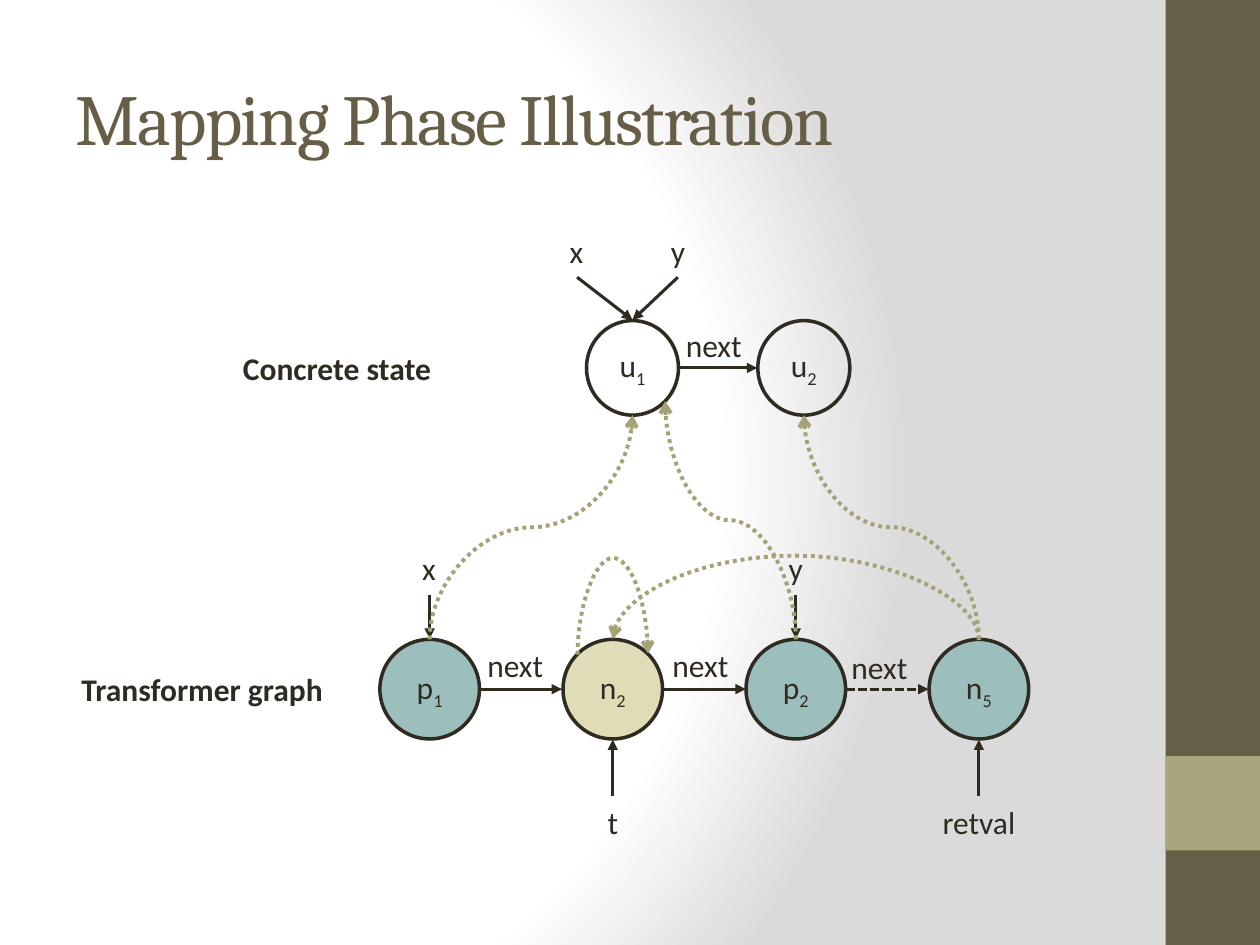
from dataclasses import dataclass
from math import cos, radians, sin
from typing import Optional

from lxml.etree import SubElement
from pptx import Presentation
from pptx.dml.color import RGBColor
from pptx.enum.dml import MSO_LINE_DASH_STYLE as Dash
from pptx.enum.shapes import MSO_CONNECTOR_TYPE as Connector, MSO_AUTO_SHAPE_TYPE as Preset
from pptx.enum.text import MSO_ANCHOR as Anchor, MSO_AUTO_SIZE as AutoSize, PP_ALIGN as Align
from pptx.oxml import parse_xml
from pptx.oxml.ns import nsdecls, qn
from pptx.util import Inches, Pt

COLORS = {
    "ink": "2F2B20", "brown": "675E47", "olive": "A9A57C", "mapping": "A6A278",
    "teal": "9CBEBD", "sand": "DFDCB7", "white": "FFFFFF", "gray": "DADADA",
}
TOP, TOP_LEFT, BOTTOM, BOTTOM_RIGHT, TOP_RIGHT = 0, 1, 4, 5, 7
GRAPH_Y, STATE_Y = 5.47, 2.92
P1_X, N2_X, P2_X, N5_X = (3.41 + 1.453 * column for column in range(4))


@dataclass
class Node:
    letter: str
    index: str
    x: float
    y: float
    width: float
    height: float
    fill: Optional[str] = None

    def site(self, number: int) -> tuple[float, float]:
        angle = radians(90 + 45 * number)
        return self.x + self.width / 2 * cos(angle), self.y - self.height / 2 * sin(angle)


@dataclass
class Arrow:
    start: tuple[float, float]
    end: tuple[float, float]
    dash: Optional[Dash] = None


@dataclass
class Label:
    text: str
    left: float
    top: float
    width: float
    height: float = 0.4
    bold: bool = False
    align: Align = Align.CENTER


@dataclass
class Mapping:
    source: str
    source_site: int
    target: str
    target_site: int
    rise: Optional[float] = None


NODES = {
    "n2": Node("n", "2", N2_X, GRAPH_Y, 0.79, 0.79, "sand"),
    "p1": Node("p", "1", P1_X, GRAPH_Y, 0.79, 0.79, "teal"),
    "p2": Node("p", "2", P2_X, GRAPH_Y, 0.79, 0.79, "teal"),
    "n5": Node("n", "5", N5_X, GRAPH_Y, 0.79, 0.79, "teal"),
    "u1": Node("u", "1", 5.02, STATE_Y, 0.73, 0.75),
    "u2": Node("u", "2", 6.38, STATE_Y, 0.73, 0.75),
}
ARROWS = [
    Arrow((P1_X, 4.72), (P1_X, 5.07)),
    Arrow((P2_X, 4.72), (P2_X, 5.07)),
    Arrow((3.8, GRAPH_Y), (4.46, GRAPH_Y)),
    Arrow((5.25, GRAPH_Y), (5.92, GRAPH_Y)),
    Arrow((6.71, GRAPH_Y), (7.37, GRAPH_Y), Dash.SQUARE_DOT),
    Arrow((N2_X, 6.32), (N2_X, 5.87)),
    Arrow((N5_X, 6.32), (N5_X, 5.87)),
    Arrow((4.58, 2.2), (5.02, 2.54)),
    Arrow((5.38, 2.2), (5.02, 2.54)),
    Arrow((5.39, STATE_Y), (6.01, STATE_Y)),
]
LABELS = [
    Label("x", 3.25, 4.31, 0.31),
    Label("y", 6.16, 4.31, 0.31),
    Label("t", 4.72, 6.32, 0.29),
    Label("retval", 7.38, 6.32, 0.78),
    Label("next", 3.74, 5.08, 0.7),
    Label("next", 5.21, 5.08, 0.7),
    Label("next", 6.63, 5.09, 0.7),
    Label("x", 4.42, 1.79, 0.31),
    Label("y", 5.22, 1.79, 0.32),
    Label("next", 5.34, 2.54, 0.65),
    Label("Concrete state", 1.83, 2.72, 1.99, bold=True, align=Align.LEFT),
    Label("Transformer graph", 0.54, 5.27, 2.13, bold=True),
]
MAPPINGS = [
    Mapping("p1", TOP, "u1", BOTTOM),
    Mapping("p2", TOP, "u1", BOTTOM_RIGHT),
    Mapping("n5", TOP, "u2", BOTTOM),
    Mapping("n5", TOP, "n2", TOP, 0.68),
    Mapping("n2", TOP_LEFT, "n2", TOP_RIGHT, 0.78),
]


def color(name: str) -> RGBColor:
    return RGBColor.from_string(COLORS[name])


def apply(target, **formats) -> None:
    for name, value in formats.items():
        setattr(target, name, value)


def add_run(paragraph, text: str, bold: bool = False):
    run = paragraph.add_run()
    run.text = text
    apply(run.font, name="Calibri", size=Pt(18), bold=bold)
    run.font.color.rgb = color("ink")
    return run


def paint_background(slide) -> None:
    stops = "".join(
        f'<a:gs pos="{position * 1000}"><a:srgbClr val="{COLORS[name]}"/></a:gs>'
        for position, name in ((0, "white"), (75, "white"), (100, "gray"))
    )
    slide.element.cSld.insert(0, parse_xml(
        f'<p:bg {nsdecls("p", "a")}><p:bgPr><a:gradFill rotWithShape="1"><a:gsLst>{stops}</a:gsLst>'
        '<a:path path="circle"><a:fillToRect l="20000" t="50000" r="100000" b="50000"/></a:path>'
        '</a:gradFill><a:effectLst/></p:bgPr></p:bg>'))


def add_band(slide, top: float, height: float, fill: str) -> None:
    band = slide.shapes.add_shape(Preset.RECTANGLE, Inches(9.25), Inches(top), Inches(0.75), Inches(height))
    band.shadow.inherit = False
    band.fill.solid()
    band.fill.fore_color.rgb = color(fill)
    band.line.fill.background()


def set_title(slide, text: str) -> None:
    title = slide.shapes.title
    apply(title, left=Inches(0.5), top=Inches(0.3), width=Inches(8.33), height=Inches(1.25))
    apply(title.text_frame, text=text, vertical_anchor=Anchor.MIDDLE, auto_size=AutoSize.NONE)
    paragraph = title.text_frame.paragraphs[0]
    paragraph.alignment = Align.LEFT
    run = paragraph.runs[0]
    apply(run.font, name="Cambria", size=Pt(41))
    run.font.color.rgb = color("brown")
    run.font._element.set("spc", "-100")


def add_node(slide, node: Node):
    shape = slide.shapes.add_shape(
        Preset.OVAL, Inches(node.x - node.width / 2), Inches(node.y - node.height / 2),
        Inches(node.width), Inches(node.height))
    shape.shadow.inherit = False
    if node.fill:
        shape.fill.solid()
        shape.fill.fore_color.rgb = color(node.fill)
    else:
        shape.fill.background()
    shape.line.color.rgb = color("ink")
    shape.line.width = Pt(2)
    apply(shape.text_frame, word_wrap=False, vertical_anchor=Anchor.MIDDLE)
    paragraph = shape.text_frame.paragraphs[0]
    paragraph.alignment = Align.CENTER
    add_run(paragraph, node.letter)
    add_run(paragraph, node.index).font._element.set("baseline", "-25000")
    return shape


def add_label(slide, label: Label) -> None:
    box = slide.shapes.add_textbox(*map(Inches, (label.left, label.top, label.width, label.height)))
    apply(box.text_frame, word_wrap=label.align == Align.LEFT, vertical_anchor=Anchor.MIDDLE)
    paragraph = box.text_frame.paragraphs[0]
    paragraph.alignment = label.align
    add_run(paragraph, label.text, label.bold)


def add_line(slide, kind: Connector, arrow: Arrow, stroke: str, width: float, head: str):
    line = slide.shapes.add_connector(kind, *map(Inches, (*arrow.start, *arrow.end)))
    line.line.color.rgb = color(stroke)
    apply(line.line, width=Pt(width), dash_style=arrow.dash)
    SubElement(line.line._get_or_add_ln(), qn("a:tailEnd"), type=head)
    SubElement(line._element.spPr, qn("a:effectLst"))
    return line


def add_mapping(slide, mapping: Mapping, shapes: dict) -> None:
    start = NODES[mapping.source].site(mapping.source_site)
    end = NODES[mapping.target].site(mapping.target_site)
    curve = add_line(slide, Connector.CURVE, Arrow(start, end, Dash.ROUND_DOT), "mapping", 2.25, "arrow")
    length, breadth = max(start[1] - end[1], 0.01), abs(end[0] - start[0])
    apply(curve, left=Inches((start[0] + end[0] - length) / 2), top=Inches((start[1] + end[1] - breadth) / 2),
          width=Inches(length), height=Inches(breadth))
    frame = curve._element.spPr.find(qn("a:xfrm"))
    for name, value in {"rot": "16200000", "flipH": "0", "flipV": str(int(end[0] < start[0]))}.items():
        frame.set(name, value)
    bend = mapping.rise / length if mapping.rise else 0.5
    adjustments = curve._element.spPr.find(qn("a:prstGeom")).get_or_add_avLst()
    SubElement(adjustments, qn("a:gd"), name="adj1", fmla=f"val {round(bend * 100000)}")
    links = curve._element.find(qn("p:nvCxnSpPr")).find(qn("p:cNvCxnSpPr"))
    for tag, name, site in (("a:stCxn", mapping.source, mapping.source_site),
                            ("a:endCxn", mapping.target, mapping.target_site)):
        SubElement(links, qn(tag), id=str(shapes[name].shape_id), idx=str(site))


def main() -> None:
    presentation = Presentation()
    apply(presentation, slide_width=Inches(10), slide_height=Inches(7.5))
    slide = presentation.slides.add_slide(presentation.slide_layouts[5])
    paint_background(slide)
    add_band(slide, 0, 7.5, "brown")
    add_band(slide, 6, 0.75, "olive")
    set_title(slide, "Mapping Phase Illustration")
    shapes = {name: add_node(slide, node) for name, node in NODES.items()}
    for arrow in ARROWS:
        add_line(slide, Connector.STRAIGHT, arrow, "ink", 1.75, "triangle")
    for mapping in MAPPINGS:
        add_mapping(slide, mapping, shapes)
    for label in LABELS:
        add_label(slide, label)
    presentation.save("out.pptx")


if __name__ == "__main__":
    main()
